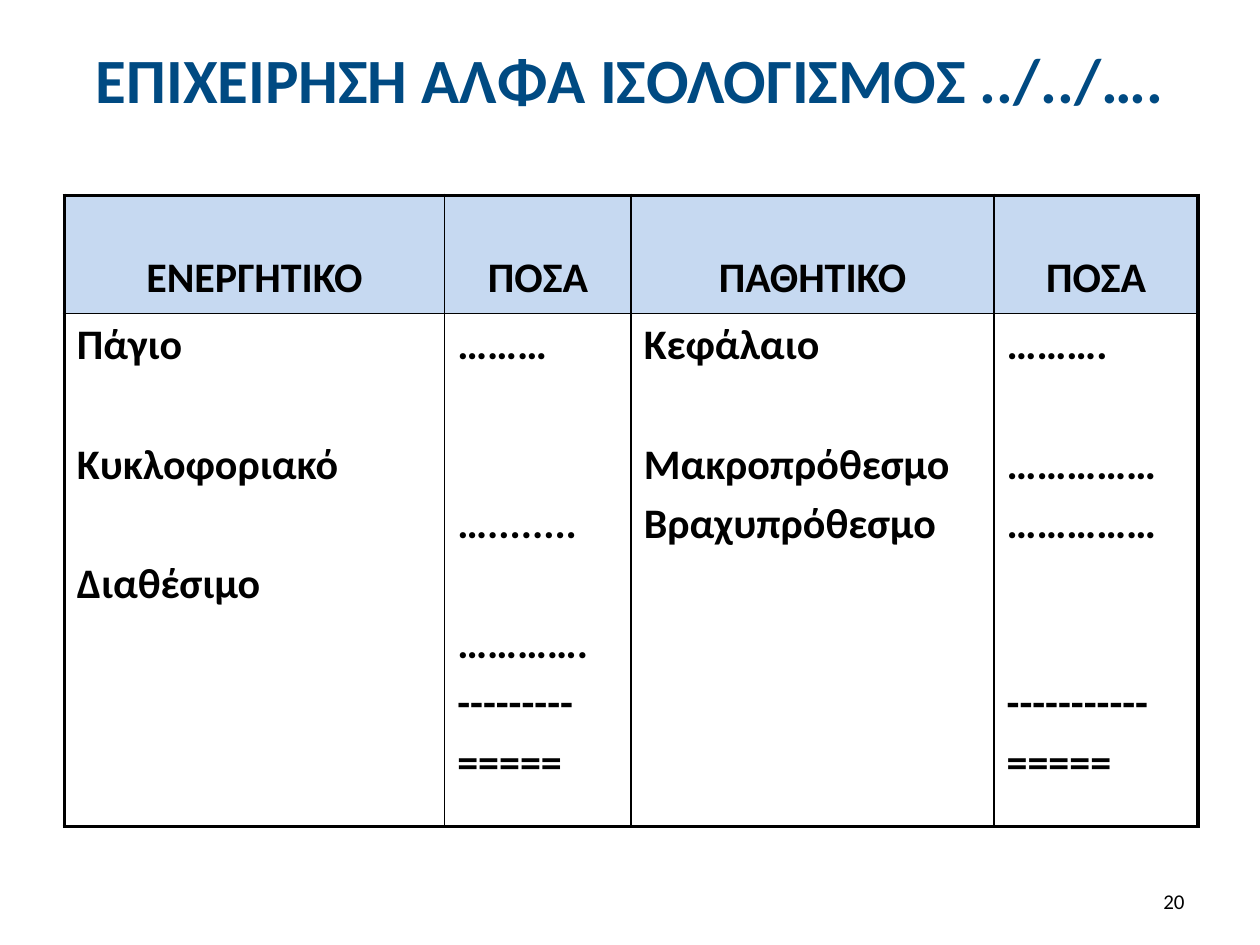
from lxml.etree import SubElement as Sub
from pptx import Presentation
from pptx.dml.color import RGBColor as RGB
from pptx.enum.text import MSO_ANCHOR as Anchor, PP_ALIGN as Align
from pptx.oxml.ns import qn
from pptx.util import Inches, Pt

# Content: each body line is (blank lines above it, text)
TITLE = "ΕΠΙΧΕΙΡΗΣΗ ΑΛΦΑ ΙΣΟΛΟΓΙΣΜΟΣ ../../…."
PAGE = "20"
HEADS = ["ENEΡΓΗΤΙΚΟ", "ΠΟΣΑ", "ΠΑΘΗΤΙΚΟ", "ΠΟΣΑ"]
BODY = [
    [(0, "Πάγιο"), (1, "Κυκλοφοριακό"), (1, "Διαθέσιμο")],
    [(0, "………"), (2, "…........"), (1, "…………."), (0, "---------"), (0, "=====")],
    [(0, "Κεφάλαιο"), (1, "Μακροπρόθεσμο"), (0, "Βραχυπρόθεσμο")],
    [(0, "………."), (1, "……………"), (0, "……………"), (2, "-----------"), (0, "=====")],
]
COLS = [3.02, 1.48, 2.88, 1.62]
ROWS = [0.94, 4.07]

THEME = {
    "font": "Calibri", "title": 36, "text": 24, "page": 12,
    "blue": "004A82", "black": "000000", "head": "C6D9F1",
    "thick": 2.25, "thin": 1,
}
GAP = 0.2 * THEME["text"]            # space above each line
PITCH = 1.22 * THEME["text"] + GAP   # one full line with its space


def style(para, size, color, bold, align):
    para.alignment = align
    for run in para.runs:
        font = run.font
        font.name, font.size, font.bold = THEME["font"], Pt(size), bold
        font.color.rgb = RGB.from_string(color)


def add_text(slide, box, text, size, color, bold, align):
    frame = slide.shapes.add_textbox(*map(Inches, box)).text_frame
    frame.word_wrap = True
    frame.vertical_anchor = Anchor.MIDDLE
    frame.text = text
    style(frame.paragraphs[0], size, color, bold, align)


def add_edges(cell, row, col):
    outer = {"L": col == 0, "R": col == len(COLS) - 1,
             "T": row == 0, "B": row == len(ROWS) - 1}
    props = cell._tc.get_or_add_tcPr()
    for side, thick in outer.items():
        width = Pt(THEME["thick" if thick else "thin"])
        line = Sub(props, qn("a:ln" + side), w=str(width))
        Sub(Sub(line, qn("a:solidFill")), qn("a:srgbClr"), val=THEME["black"])


def fill_cell(cell, lines, align):
    frame = cell.text_frame
    frame.text = "\n".join(text for _, text in lines)
    for i, (para, (blanks, _)) in enumerate(zip(frame.paragraphs, lines)):
        if i:
            para.space_before = Pt(round(GAP + blanks * PITCH, 1))
        style(para, THEME["text"], THEME["black"], True, align)


deck = Presentation()
deck.slide_width, deck.slide_height = Inches(10), Inches(7.5)
slide = deck.slides.add_slide(deck.slide_layouts[6])

# Title
add_text(slide, (0, 0.13, 10, 0.99), TITLE, THEME["title"], THEME["blue"],
         True, Align.CENTER)

# Balance sheet table
size = map(Inches, (0.51, 1.55, sum(COLS), sum(ROWS)))
table = slide.shapes.add_table(len(ROWS), len(COLS), *size).table
table.first_row = table.horz_banding = False
for row, high in zip(table.rows, ROWS):
    row.height = Inches(high)
for col, wide in enumerate(COLS):
    table.columns[col].width = Inches(wide)
    head, body = table.cell(0, col), table.cell(1, col)
    add_edges(head, 0, col)
    add_edges(body, 1, col)
    head.fill.solid()
    head.fill.fore_color.rgb = RGB.from_string(THEME["head"])
    body.fill.background()
    fill_cell(head, [(0, HEADS[col])], Align.CENTER)
    head.text_frame.paragraphs[0].line_spacing = 2.0
    fill_cell(body, BODY[col], Align.LEFT)

# Page number
add_text(slide, (7.17, 6.95, 2.33, 0.4), PAGE, THEME["page"], THEME["black"],
         False, Align.RIGHT)

deck.save("out.pptx")
